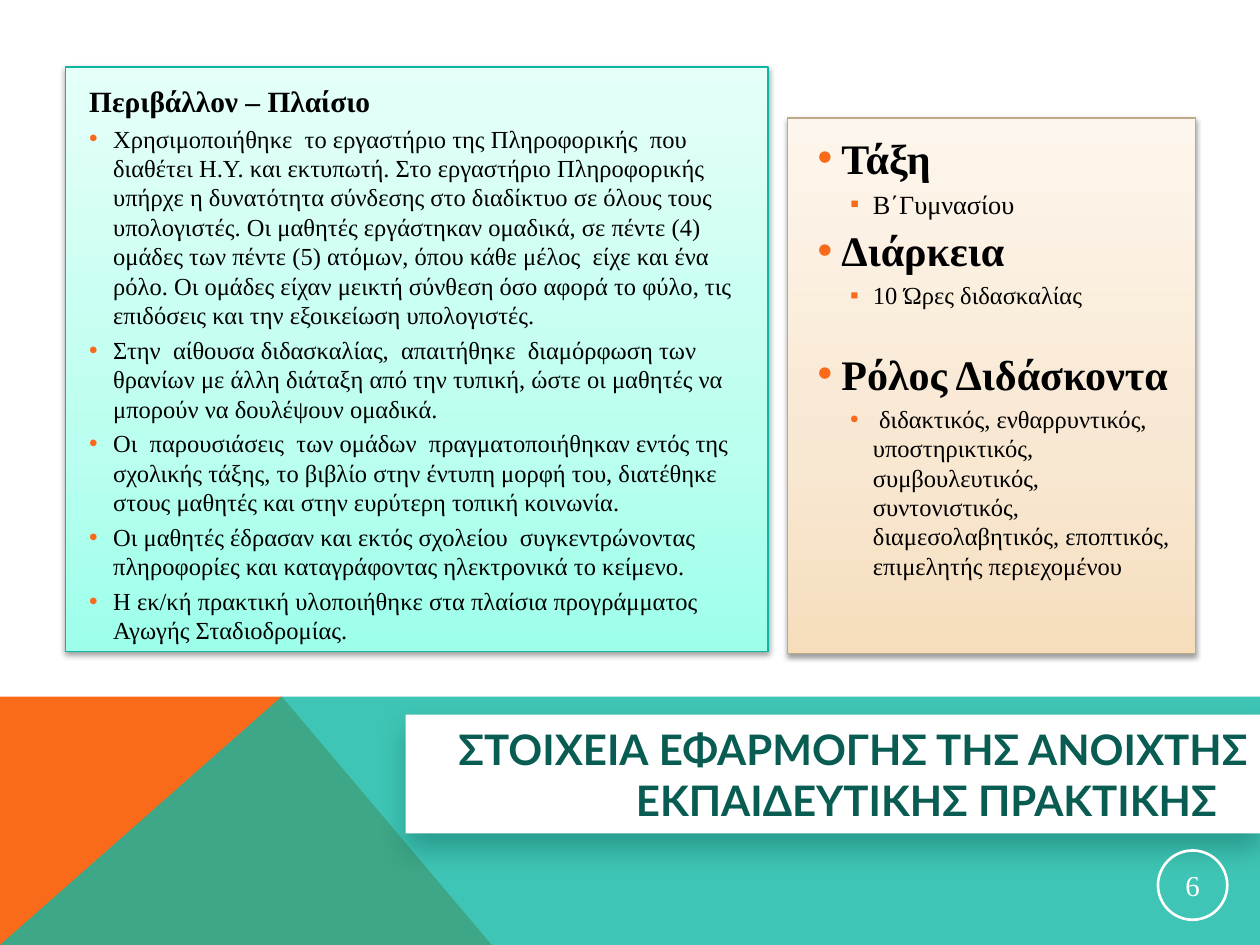
from copy import deepcopy

from lxml import etree
from pptx import Presentation
from pptx import util as u
from pptx.dml.color import RGBColor
from pptx.enum import shapes, text
from pptx.oxml.ns import qn

Pt = u.Pt
COLOURS = {
    "orange": "F96A1B", "teal": "10B7A3", "dark_teal": "085C52",
    "mint_line": "0CB7A3", "sand_line": "BFA989",
    "white": "FFFFFF", "black": "000000",
}
MINT = [(0, "9DFFEA"), (0.35, "BAFFEF"), (1, "E5FFF9")]
SAND = [(0, "F6DEBD"), (0.35, "F8E7D1"), (1, "FDF6EC")]
SERIF, SANS = "Times New Roman", "Lato"
# Paragraph styles: level, left margin, hanging indent, bullet, size, bold
STYLES = {
    "heading": (0, 0, 0, None, 16.8, True),
    "item": (1, 13.7, 13.7, "•", 14, False),
    "topic": (1, 13.7, 13.7, "•", 24, True),
    "class": (2, 31.7, 13, "▪", 15, False),
    "detail": (2, 31.7, 13, "▪", 14, False),
    "role": (2, 31.7, 13, "•", 14, False),
}


def rgb(name):
    return RGBColor.from_string(COLOURS[name])


def add(parent, tag, **attributes):
    return etree.SubElement(parent, qn(tag), attributes)


class SlideBuilder:
    def __init__(self, slide):
        self.shapes = slide.shapes

    def polygon(self, points, colour, alpha=None):
        builder = self.shapes.build_freeform(*points[0], scale=Pt(1))
        builder.add_line_segments(points[1:], close=True)
        area = builder.convert_to_shape()
        area.shadow.inherit = False
        area.line.fill.background()
        area.fill.solid()
        area.fill.fore_color.rgb = rgb(colour)
        if alpha:
            tint = area.element.spPr.find(qn("a:solidFill"))[0]
            add(tint, "a:alpha", val=str(alpha * 1000))

    def box(self, kind, left, top, width, height, line=None, line_width=0.75):
        shape = self.shapes.add_shape(kind, *map(Pt, (left, top, width, height)))
        shape.shadow.inherit = False
        shape.fill.background()
        if line:
            shape.line.color.rgb = rgb(line)
            shape.line.width = Pt(line_width)
        else:
            shape.line.fill.background()
        return shape

    def shadow(self, shape, colour, alpha, blur, distance):
        effects = shape.element.spPr.find(qn("a:effectLst"))
        outer = add(effects, "a:outerShdw", blurRad=str(Pt(blur)),
                    dist=str(Pt(distance)), dir="5400000", rotWithShape="0")
        add(add(outer, "a:srgbClr", val=COLOURS[colour]),
            "a:alpha", val=str(alpha * 1000))

    def panel(self, left, top, width, height, stops, line):
        panel = self.box(shapes.MSO_SHAPE.RECTANGLE, left, top, width, height, line)
        panel.fill.gradient()
        panel.fill.gradient_angle = 90
        stop_list = panel.element.spPr.find(".//" + qn("a:gsLst"))
        stop_list.append(deepcopy(stop_list[0]))
        for stop, (position, colour) in zip(panel.fill.gradient_stops, stops):
            stop.position = position
            stop.color.rgb = RGBColor.from_string(colour)
        self.shadow(panel, "black", 38, 3.1, 1.6)

    def font(self, paragraph, name, size, colour, bold=False):
        font = paragraph.font
        font.name, font.size, font.bold = name, Pt(size), bold
        font.color.rgb = rgb(colour)

    def bullets(self, left, top, width, height, entries):
        frame = self.shapes.add_textbox(*map(Pt, (left, top, width, height))).text_frame
        frame.word_wrap = True
        for i, (style, wording, *before) in enumerate(entries):
            level, margin, hanging, bullet, size, bold = STYLES[style]
            paragraph = frame.add_paragraph() if i else frame.paragraphs[0]
            paragraph.text = wording
            paragraph.level = level
            paragraph.space_before = Pt(before[0] if before else 3 if i else 0)
            properties = paragraph._p.get_or_add_pPr()
            properties.set("marL", str(Pt(margin)))
            properties.set("indent", str(Pt(-hanging)))
            if bullet:
                add(add(properties, "a:buClr"), "a:srgbClr", val=COLOURS["orange"])
                add(properties, "a:buFont", typeface="Arial")
                add(properties, "a:buChar", char=bullet)
            self.font(paragraph, SERIF, size, "black", bold)

    def title(self, left, top, width, height, lines):
        banner = self.box(shapes.MSO_SHAPE.RECTANGLE, left, top, width, height)
        banner.fill.solid()
        banner.fill.fore_color.rgb = rgb("white")
        self.shadow(banner, "dark_teal", 40, 16, 8)
        frame = banner.text_frame
        frame.vertical_anchor = text.MSO_ANCHOR.MIDDLE
        for i, (wording, right_margin) in enumerate(lines):
            paragraph = frame.add_paragraph() if i else frame.paragraphs[0]
            paragraph.text = wording
            paragraph.alignment = text.PP_ALIGN.RIGHT
            paragraph._p.get_or_add_pPr().set("marR", str(Pt(right_margin)))
            self.font(paragraph, SANS, 24, "dark_teal", True)

    def page_number(self, left, top, size, number):
        badge = self.box(shapes.MSO_SHAPE.OVAL, left, top, size, size, "white", 1.5)
        frame = badge.text_frame
        frame.margin_left = frame.margin_right = Pt(0.7)
        frame.margin_top = frame.margin_bottom = Pt(0.7)
        frame.vertical_anchor = text.MSO_ANCHOR.MIDDLE
        paragraph = frame.paragraphs[0]
        paragraph.text = number
        paragraph.alignment = text.PP_ALIGN.CENTER
        self.font(paragraph, SERIF, 16.5, "white")


def main():
    presentation = Presentation()
    presentation.slide_width, presentation.slide_height = Pt(720), Pt(540)
    blank = presentation.slide_layouts[6]
    page = SlideBuilder(presentation.slides.add_slide(blank))

    # Coloured footer
    page.polygon([(0, 540), (0, 397.7), (160.7, 397.7), (281.3, 540)], "orange")
    page.polygon([(0, 540), (160.7, 397.7), (720, 397.7), (720, 540)], "teal", 80)

    # Panels behind the two columns
    page.panel(450, 67.5, 233, 306, SAND, "sand_line")
    page.panel(37.4, 38.2, 401.5, 334, MINT, "mint_line")

    # Title banner
    page.title(231.8, 408.4, 488.2, 67.9, [
        ("ΣΤΟΙΧΕΙΑ ΕΦΑΡΜΟΓΗΣ ΤΗΣ ΑΝΟΙΧΤΗΣ", 0),
        ("ΕΚΠΑΙΔΕΥΤΙΚΗΣ ΠΡΑΚΤΙΚΗΣ", 17.5),
    ])

    # Setting and context
    page.bullets(43.9, 43.9, 390.2, 325.4, [
        ("heading", "Περιβάλλον – Πλαίσιο"),
        ("item", "Χρησιμοποιήθηκε  το εργαστήριο της Πληροφορικής  που διαθέτει Η.Υ. "
                 "και εκτυπωτή. Στο εργαστήριο Πληροφορικής υπήρχε η δυνατότητα σύνδεσης "
                 "στο διαδίκτυο σε όλους τους υπολογιστές. Οι μαθητές εργάστηκαν ομαδικά, "
                 "σε πέντε (4) ομάδες των πέντε (5) ατόμων, όπου κάθε μέλος  είχε και ένα "
                 "ρόλο. Οι ομάδες είχαν μεικτή σύνθεση όσο αφορά το φύλο, τις επιδόσεις "
                 "και την εξοικείωση υπολογιστές."),
        ("item", "Στην  αίθουσα διδασκαλίας,  απαιτήθηκε  διαμόρφωση των θρανίων με άλλη "
                 "διάταξη από την τυπική, ώστε οι μαθητές να μπορούν να δουλέψουν ομαδικά."),
        ("item", "Οι  παρουσιάσεις  των ομάδων  πραγματοποιήθηκαν εντός της σχολικής "
                 "τάξης, το βιβλίο στην έντυπη μορφή του, διατέθηκε στους μαθητές και "
                 "στην ευρύτερη τοπική κοινωνία."),
        ("item", "Οι μαθητές έδρασαν και εκτός σχολείου  συγκεντρώνοντας πληροφορίες "
                 "και καταγράφοντας ηλεκτρονικά το κείμενο."),
        ("item", "Η εκ/κή πρακτική υλοποιήθηκε στα πλαίσια προγράμματος Αγωγής "
                 "Σταδιοδρομίας."),
    ])

    # Class, duration and teacher's role
    page.bullets(460.1, 72, 218.2, 292.3, [
        ("topic", "Τάξη"),
        ("class", "Β΄Γυμνασίου"),
        ("topic", "Διάρκεια"),
        ("detail", "10 Ώρες διδασκαλίας"),
        ("topic", "Ρόλος Διδάσκοντα", 22),
        ("role", " διδακτικός, ενθαρρυντικός, υποστηρικτικός, συμβουλευτικός, "
                 "συντονιστικός, διαμεσολαβητικός, εποπτικός, επιμελητής περιεχομένου"),
    ])

    page.page_number(661.7, 486, 39.6, "6")
    presentation.save("out.pptx")


if __name__ == "__main__":
    main()
